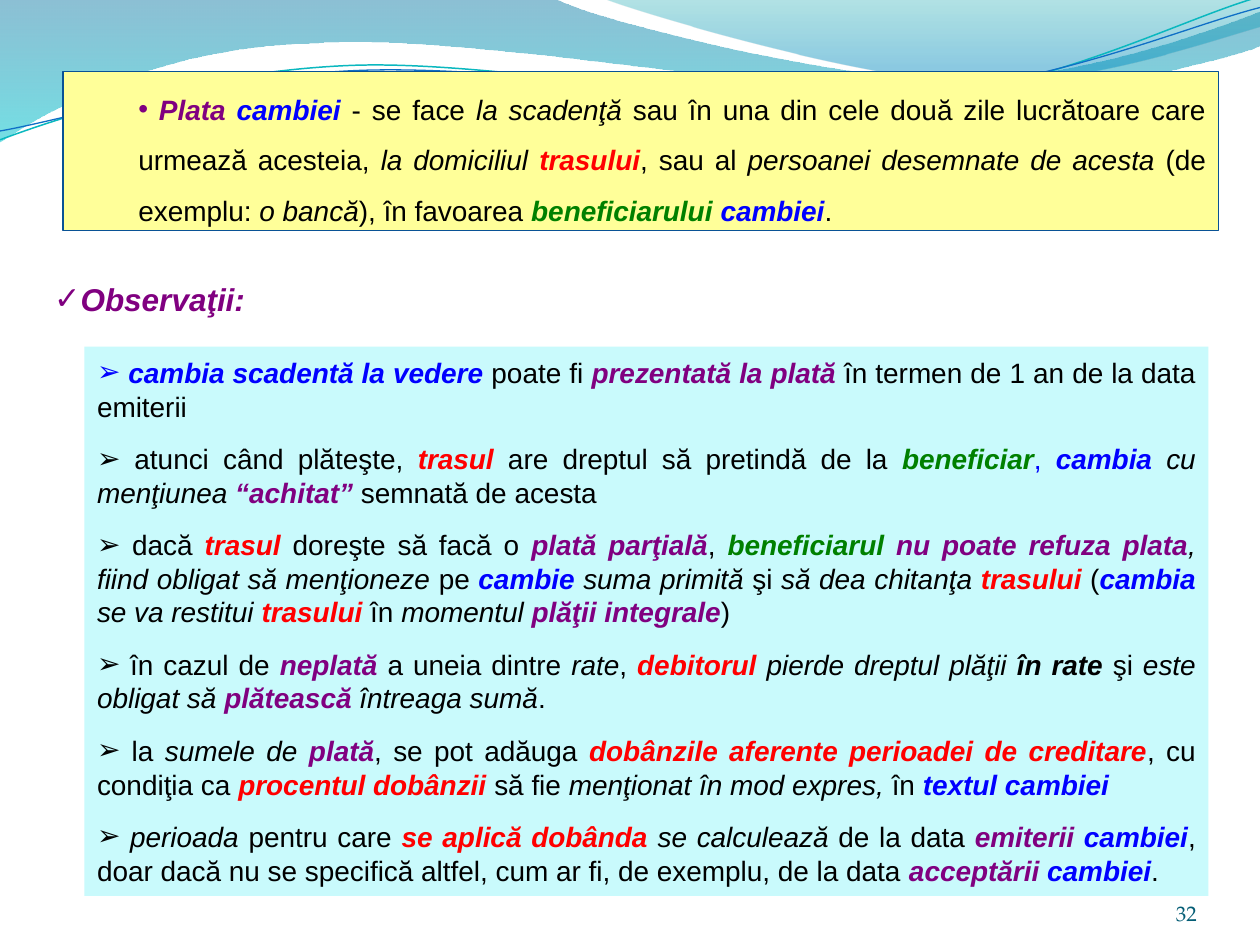
import math

import pptx
import pptx.dml.color
import pptx.enum.shapes
import pptx.enum.text
import pptx.oxml
import pptx.oxml.ns
import pptx.util
from pptx.util import Inches, Pt

ALIGN = pptx.enum.text.PP_ALIGN
ANCHOR = pptx.enum.text.MSO_ANCHOR
NAMESPACE = pptx.oxml.ns.nsdecls("a")

COLORS = {
    "black": "000000", "purple": "800080", "blue": "0000FF",
    "red": "FF0000", "green": "008000", "yellow": "FFFF99",
    "border": "095295", "aqua": "C9FAFC", "number": "045D75",
    "teal line": "0AB8BF", "blue line": "0F6FC6",
    "deep blue": "0074A1", "cyan": "00C6CF",
    "deep teal": "00A1A9", "sea blue": "008BBF",
}

# Marked spans read {style:words}; a style gives colour, bold and italic.
STYLES = {
    "n": ("black", False, False), "i": ("black", False, True),
    "k": ("black", True, True), "p": ("purple", True, True),
    "b": ("blue", True, True), "r": ("red", True, True),
    "g": ("green", True, True), "c": ("blue", False, False),
}

PAYMENT = (
    "{p: Plata}{b: cambiei }- se face {i:la scadenţă} sau în una din cele două "
    "zile lucrătoare care urmează acesteia, {i:la domiciliul }{r:trasului}, sau al "
    "{i:persoanei desemnate de acesta} (de exemplu: {i:o bancă}), în favoarea "
    "{g:beneficiarului }{b:cambiei}. "
)
HEADING = "{p:Observaţii:}"
REMARKS = [
    "{b: cambia scadentă la vedere} poate fi {p:prezentată la plată} în termen de "
    "1 an de la data emiterii ",
    " atunci când plăteşte, {r:trasul} are dreptul să pretindă de la "
    "{g:beneficiar}{c:,}{b: cambia }{i:cu menţiunea }{p:“achitat”} semnată de acesta",
    " dacă {r:trasul} doreşte să facă o {p:plată parţială}, {g:beneficiarul }"
    "{p:nu poate refuza plata}{i:, fiind obligat să menţioneze} pe {b:cambie }"
    "{i:suma primită} şi {i:să dea chitanţa }{r:trasului} ({b:cambia }"
    "{i:se va restitui }{r:trasului }în {i:momentul }{p:plăţii integrale})",
    " în cazul de {p:neplată }a uneia dintre {i:rate}, {r:debitorul }"
    "{i:pierde dreptul plăţii }{k:în rate} şi {i:este obligat să }{p:plătească}"
    "{i: întreaga sumă}. ",
    " la {i:sumele de }{p:plată}, se pot adăuga "
    "{r:dobânzile aferente perioadei de creditare}, cu condiţia ca "
    "{r:procentul dobânzii} să fie {i:menţionat în mod expres,} în {b:textul cambiei}",
    "{i: perioada} pentru care {r:se aplică dobânda }{i:se calculează} de la data "
    "{p:emiterii}{b: cambiei}, doar dacă nu se specifică altfel, cum ar fi, de "
    "exemplu, de la data {p:acceptării}{b: cambiei}.",
]

# Each wave: a start point, then segments of one point (line) or three (curve).
UPPER_WAVE = [
    [(0, 0)], [(4.4, -0.01)],
    [(4.76, 0.17), (6.64, 0.63), (7.58, 0.63)],
    [(8.53, 0.63), (9.58, 0.26), (10, 0.09)], [(10.01, 0.36)],
    [(9.83, 0.44), (8.7, 0.76), (7.46, 0.75)],
    [(6.22, 0.75), (3.82, 0.28), (2.57, 0.34)],
    [(1.29, 0.36), (0.46, 0.83), (-0.01, 1.13)], [(0, 0)],
]
RIGHT_WAVE = [
    [(4.79, -0.01)], [(5.09, 0.11), (6.82, 0.62), (7.69, 0.65)],
    [(8.56, 0.69), (9.61, 0.32), (10, 0.21)], [(10, 0)], [(4.79, -0.01)],
]
TEAL_WAVE = [
    [(0, 1.11)], [(0.48, 0.93), (1.58, 0.57), (2.77, 0.52)],
    [(3.95, 0.47), (5.93, 0.89), (7.13, 0.8)],
    [(8.33, 0.71), (9.38, 0.15), (9.98, -0.02)],
]
BLUE_WAVE = [
    [(0, 1.04)], [(0.47, 0.96), (1.64, 0.61), (2.83, 0.56)],
    [(4.03, 0.51), (5.97, 0.84), (7.17, 0.75)],
    [(8.36, 0.67), (9.41, 0.21), (10, 0.06)],
]
LINE_TURN = 357.3


def rgb(name):
    return pptx.dml.color.RGBColor.from_string(COLORS[name])


def turn_back(outline, center, degrees):
    """Return the outline as it lies before a turn about the center."""
    cos, sin = math.cos(math.radians(-degrees)), math.sin(math.radians(-degrees))
    cx, cy = center
    return [[(cx + (x - cx) * cos - (y - cy) * sin,
              cy + (x - cx) * sin + (y - cy) * cos) for x, y in segment]
            for segment in outline]


def add_wave(page, outline, closed):
    ends = [(Inches(x), Inches(y)) for x, y in (segment[-1] for segment in outline)]
    builder = page.shapes.build_freeform(*ends[0], scale=1.0)
    builder.add_line_segments(ends[1:], close=closed)
    wave = builder.convert_to_shape()
    wave.shadow.inherit = False
    lines = wave._element.spPr.findall(".//" + pptx.oxml.ns.qn("a:lnTo"))
    for line, segment in zip(lines, outline[1:]):
        if len(segment) == 3:
            points = "".join(
                f'<a:pt x="{Inches(x) - wave.left}" y="{Inches(y) - wave.top}"/>'
                for x, y in segment)
            line.getparent().replace(line, pptx.oxml.parse_xml(
                f"<a:cubicBezTo {NAMESPACE}>{points}</a:cubicBezTo>"))
    return wave


def add_filled_wave(page, outline, stops):
    """Stops are (position, colour, opacity), all but the colour in percent."""
    wave = add_wave(page, outline, True)
    wave.line.fill.background()
    wave.fill.gradient()
    wave.fill.gradient_angle = 270
    stop_list = wave._element.spPr.find(".//" + pptx.oxml.ns.qn("a:gsLst"))
    for old_stop in list(stop_list):
        stop_list.remove(old_stop)
    for position, color, opacity in stops:
        stop_list.append(pptx.oxml.parse_xml(
            f'<a:gs {NAMESPACE} pos="{position * 1000}">'
            f'<a:srgbClr val="{COLORS[color]}"><a:alpha val="{opacity * 1000}"/>'
            '</a:srgbClr></a:gs>'))


def add_line_wave(page, outline, center, color, width):
    wave = add_wave(page, turn_back(outline, center, LINE_TURN), False)
    wave.rotation = LINE_TURN
    wave.fill.background()
    wave.line.color.rgb = rgb(color)
    wave.line.width = Pt(width)


def place(box, left, top, width, height):
    box.left, box.top = Inches(left), Inches(top)
    box.width, box.height = Inches(width), Inches(height)


def split_spans(marked):
    """Return (style, words) pairs from marked text."""
    spans = []
    for chunk in marked.replace("}", "{n:").split("{"):
        style, words = chunk.split(":", 1) if chunk[1:2] == ":" else ("n", chunk)
        if words:
            spans.append((style, words))
    return spans


def write_paragraph(para, marked, size, bullet, indent=0.0):
    para.alignment = ALIGN.JUSTIFY
    para.space_before = Pt(0)
    properties = para._p.get_or_add_pPr()
    properties.set("marL", str(Inches(indent)))
    properties.set("indent", "0")
    for mark in ('buFont typeface="Arial"', f'buChar char="{bullet}"'):
        properties.append(pptx.oxml.parse_xml(
            f"<a:{mark} {NAMESPACE}/>"))
    for style, words in split_spans(marked):
        color, bold, italic = STYLES[style]
        span = para.add_run()
        span.text = words
        span.font.name, span.font.size = "Arial", Pt(size)
        span.font.bold, span.font.italic = bold, italic
        span.font.color.rgb = rgb(color)


def set_frame(box, anchor, wrap=True):
    frame = box.text_frame
    frame.auto_size = pptx.enum.text.MSO_AUTO_SIZE.NONE
    frame.vertical_anchor, frame.word_wrap = anchor, wrap
    return frame


def add_payment_box(page):
    box = page.shapes.add_shape(
        pptx.enum.shapes.MSO_SHAPE.RECTANGLE, 0, 0, 0, 0)
    place(box, 0.5, 0.57, 9.17, 1.26)
    box.shadow.inherit = False
    box.fill.solid()
    box.fill.fore_color.rgb = rgb("yellow")
    box.line.color.rgb = rgb("border")
    box.line.width = Pt(0.75)
    para = set_frame(box, ANCHOR.MIDDLE).paragraphs[0]
    write_paragraph(para, PAYMENT, 16, "•", 0.5)
    para.line_spacing = 1.5


def fill_heading(box):
    place(box, 0.33, 2.17, 1.72, 0.4)
    frame = set_frame(box, ANCHOR.TOP, wrap=False)
    write_paragraph(frame.paragraphs[0], HEADING, 18, "✓")


def fill_remarks(box):
    place(box, 0.67, 2.75, 8.92, 4.36)
    box.fill.solid()
    box.fill.fore_color.rgb = rgb("aqua")
    frame = set_frame(box, ANCHOR.MIDDLE)
    for index, remark in enumerate(REMARKS):
        para = frame.add_paragraph() if index else frame.paragraphs[0]
        write_paragraph(para, remark, 16, "➢")
        if index:
            para.space_before = Pt(10.8)


def add_page_number(page):
    box = page.shapes.add_textbox(0, 0, 0, 0)
    place(box, 8.67, 6.95, 0.83, 0.4)
    frame = set_frame(box, ANCHOR.BOTTOM)
    frame.margin_left = frame.margin_right = frame.margin_top = frame.margin_bottom = 0
    frame.text = "32"
    para = frame.paragraphs[0]
    para.alignment = ALIGN.RIGHT
    font = para.runs[0].font
    font.name, font.size = "TeX Gyre Pagella", Pt(12)
    font.color.rgb = rgb("number")


def main():
    deck = pptx.Presentation()
    deck.slide_width, deck.slide_height = Inches(10), Inches(7.5)
    page = deck.slides.add_slide(deck.slide_layouts[1])
    heading, remarks = page.placeholders
    add_filled_wave(page, UPPER_WAVE, [(0, "deep blue", 45), (100, "cyan", 55)])
    add_filled_wave(page, RIGHT_WAVE, [(0, "deep teal", 30), (80, "sea blue", 45)])
    add_line_wave(page, TEAL_WAVE, (4.99, 0.57), "teal line", 0.85)
    add_line_wave(page, BLUE_WAVE, (5, 0.59), "blue line", 0.75)
    add_payment_box(page)
    for box, fill in ((heading, fill_heading), (remarks, fill_remarks)):
        page.shapes._spTree.append(box._element)  # in front of the waves
        fill(box)
    add_page_number(page)
    deck.save("out.pptx")


if __name__ == "__main__":
    main()
